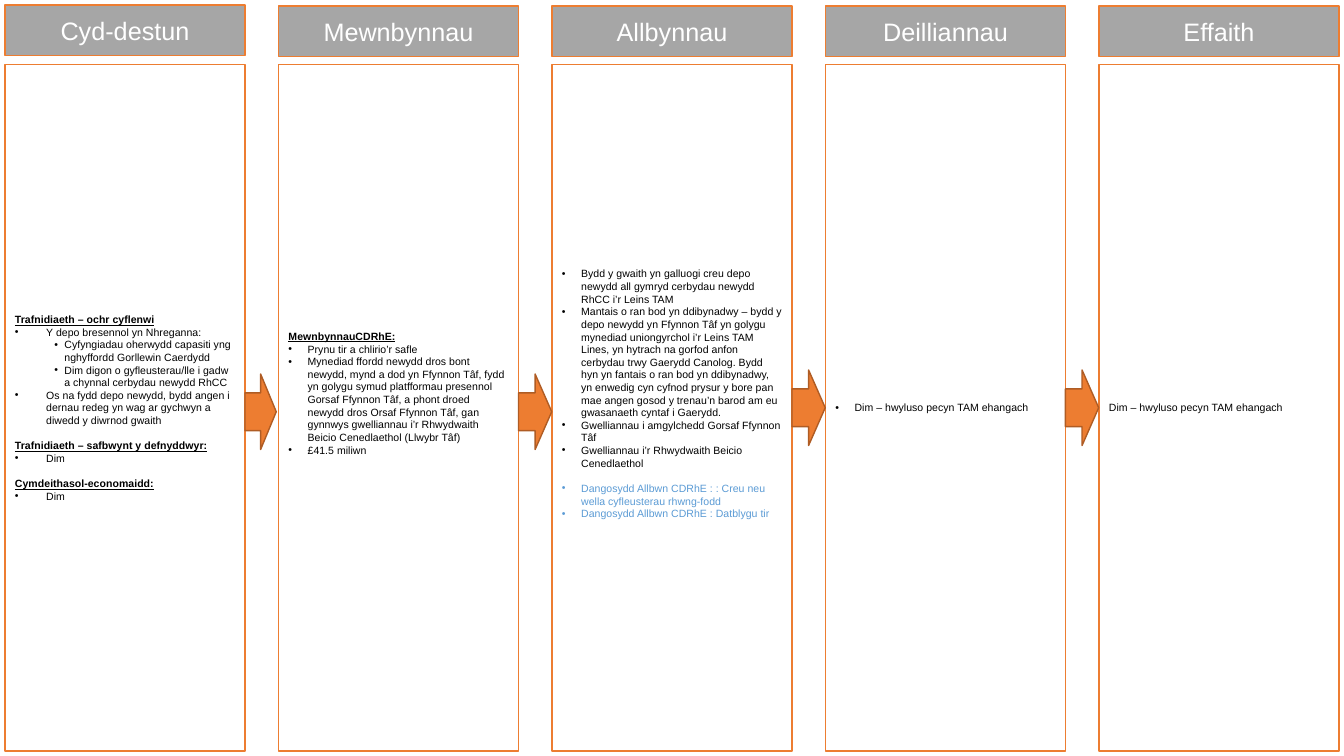
import pptx
import pptx.util
import pptx.dml.color
import pptx.enum.shapes
import pptx.enum.text
from dataclasses import dataclass
from lxml import etree

Inches = pptx.util.Inches
Pt = pptx.util.Pt
Kind = pptx.enum.shapes.MSO_SHAPE
Align = pptx.enum.text.PP_ALIGN


@dataclass(frozen=True)
class Theme:
    font: str = "Arial"
    white: str = "FFFFFF"
    black: str = "000000"
    grey: str = "A6A6A6"
    orange: str = "ED7D31"
    rust: str = "AF5C24"
    blue: str = "5B9BD5"
    title: float = 18
    body: float = 7.5
    line: float = 1
    gap: float = 9


STYLES = {
    "plain": (0, 0, 0),
    "head": (0, 0, 0),
    "dot": (0, 0.19, -0.19),
    "blue": (0, 0.19, -0.19),
    "wide": (0, 0.31, -0.31),
    "deep": (1, 0.31, -0.31),
    "sub": (1, 0.49, -0.1),
}


class Board:
    def __init__(self, slide, theme):
        self.theme = theme
        self.shapes = slide.shapes.add_group_shape().shapes

    def color(self, code):
        return pptx.dml.color.RGBColor.from_string(code)

    def shape(self, kind, place, fill, line):
        item = self.shapes.add_shape(kind, *map(Inches, place))
        item.shadow.inherit = False
        item.fill.solid()
        item.fill.fore_color.rgb = self.color(fill)
        item.line.color.rgb = self.color(line)
        item.line.width = Pt(self.theme.line)
        return item

    def frame(self, place, fill):
        item = self.shape(Kind.RECTANGLE, place, fill, self.theme.orange)
        text = item.text_frame
        text.word_wrap = True
        text.vertical_anchor = pptx.enum.text.MSO_ANCHOR.MIDDLE
        return text

    def run(self, para, words, size, color, bold=False):
        run = para.add_run()
        run.text = words
        font = run.font
        font.name = self.theme.font
        font.size = Pt(size)
        font.color.rgb = self.color(color)
        font.bold = bold
        font.underline = bold

    def title(self, place, words):
        para = self.frame(place, self.theme.grey).paragraphs[0]
        para.alignment = Align.CENTER
        self.run(para, words, self.theme.title, self.theme.white)

    def bullet(self, para, indent, hang):
        props = para._p.get_or_add_pPr()
        props.set("marL", str(Inches(indent)))
        props.set("indent", str(Inches(hang)))
        space = props.nsmap["a"]
        font = etree.SubElement(props, f"{{{space}}}buFont")
        font.set("typeface", self.theme.font)
        mark = etree.SubElement(props, f"{{{space}}}buChar")
        mark.set("char", "•")

    def body(self, place, blocks, foot):
        text = self.frame(place, self.theme.white)
        text.margin_bottom = Inches(foot)
        para = text.paragraphs[0]
        for b, block in enumerate(blocks):
            for r, (style, words) in enumerate(block):
                if b or r:
                    para = text.add_paragraph()
                para.alignment = Align.LEFT
                level, indent, hang = STYLES[style]
                para.level = level
                if b and not r:
                    para.space_before = Pt(self.theme.gap)
                if indent:
                    self.bullet(para, indent, hang)
                tint = self.theme.blue if style == "blue" else self.theme.black
                self.run(para, words, self.theme.body, tint, style == "head")

    def arrow(self, place):
        self.shape(Kind.RIGHT_ARROW, place, self.theme.orange, self.theme.rust)


CONTEXT = [
    [
        ("head", "Trafnidiaeth – ochr cyflenwi"),
        ("wide", "Y depo bresennol yn Nhreganna:"),
        ("sub", "Cyfyngiadau oherwydd capasiti yng nghyffordd Gorllewin Caerdydd"),
        ("sub", "Dim digon o gyfleusterau/lle i gadw a chynnal cerbydau newydd RhCC"),
        ("deep", "Os na fydd depo newydd, bydd angen i dernau redeg yn wag ar gychwyn "
                 "a diwedd y diwrnod gwaith"),
    ],
    [("head", "Trafnidiaeth – safbwynt y defnyddwyr:"), ("wide", "Dim")],
    [("head", "Cymdeithasol-economaidd:"), ("wide", "Dim")],
]
INPUTS = [[
    ("head", "MewnbynnauCDRhE:"),
    ("dot", "Prynu tir a chlirio’r safle"),
    ("dot", "Mynediad ffordd newydd dros bont newydd, mynd a dod yn Ffynnon Tâf, fydd "
            "yn golygu symud platfformau presennol Gorsaf Ffynnon Tâf, a phont droed "
            "newydd dros Orsaf Ffynnon Tâf, gan gynnwys gwelliannau i’r Rhwydwaith "
            "Beicio Cenedlaethol (Llwybr Tâf)"),
    ("dot", "£41.5 miliwn"),
]]
OUTPUTS = [
    [
        ("dot", "Bydd y gwaith yn galluogi creu depo newydd all gymryd cerbydau newydd "
                "RhCC i’r Leins TAM"),
        ("dot", "Mantais o ran bod yn ddibynadwy – bydd y depo newydd yn Ffynnon Tâf yn "
                "golygu mynediad uniongyrchol i’r Leins TAM Lines, yn hytrach na gorfod "
                "anfon cerbydau trwy Gaerydd Canolog. Bydd hyn yn fantais o ran bod yn "
                "ddibynadwy, yn enwedig cyn cyfnod prysur y bore pan mae angen gosod y "
                "trenau’n barod am eu gwasanaeth cyntaf i Gaerydd."),
        ("dot", "Gwelliannau i amgylchedd Gorsaf Ffynnon Tâf"),
        ("dot", "Gwelliannau i’r Rhwydwaith Beicio Cenedlaethol"),
    ],
    [
        ("blue", "Dangosydd Allbwn CDRhE : : Creu neu wella cyfleusterau rhwng-fodd"),
        ("blue", "Dangosydd Allbwn CDRhE : Datblygu tir"),
    ],
]
WIDER = "Dim – hwyluso pecyn TAM ehangach"
COLUMNS = [
    ("Cyd-destun", 0.05, CONTEXT, 0.05),
    ("Mewnbynnau", 0.06, INPUTS, 0.34),
    ("Allbynnau", 0.06, OUTPUTS, 0.33),
    ("Deilliannau", 0.06, [[("dot", WIDER)]], 0.05),
    ("Effaith", 0.06, [[("plain", WIDER)]], 0.05),
]
ARROWS = [(3.71, 0.31), (3.71, 0.33), (3.67, 0.33), (3.67, 0.33)]
LEFT, LAST, WIDTH = 0.05, 10.9, 2.38
STEP = (LAST - LEFT) / (len(COLUMNS) - 1)


def main():
    deck = pptx.Presentation()
    deck.slide_width = Inches(13.33)
    deck.slide_height = Inches(7.5)
    board = Board(deck.slides.add_slide(deck.slide_layouts[6]), Theme())
    for i, (name, top, blocks, foot) in enumerate(COLUMNS):
        x = LEFT + i * STEP
        board.body((x, 0.64, WIDTH, 6.81), blocks, foot)
        board.title((x, top, WIDTH, 0.5), name)
    for i, (top, width) in enumerate(ARROWS):
        board.arrow((LEFT + i * STEP + WIDTH, top, width, 0.75))
    deck.save("out.pptx")


if __name__ == "__main__":
    main()
